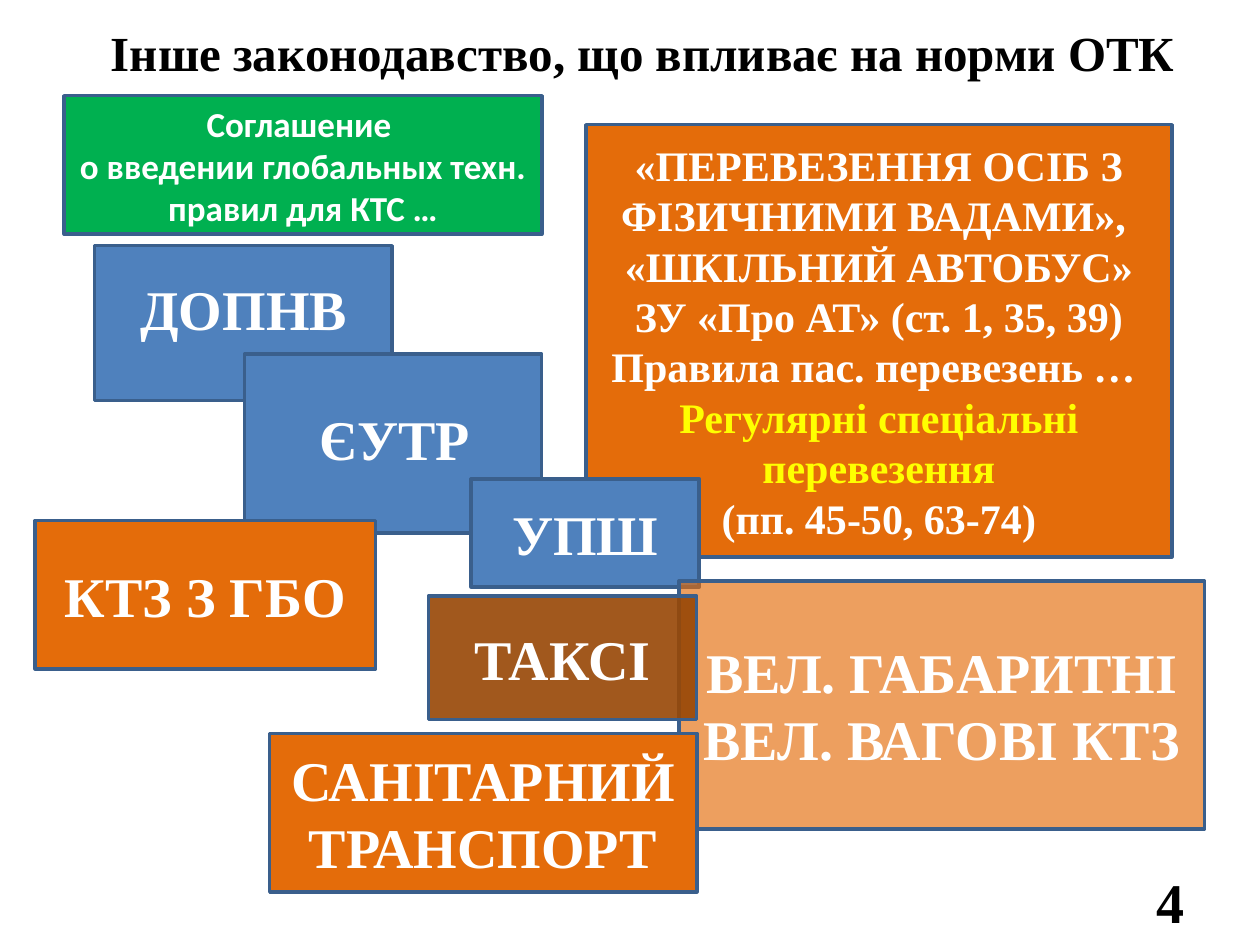
from lxml.etree import SubElement
from pptx import Presentation
from pptx.dml.color import RGBColor
from pptx.enum.shapes import MSO_SHAPE as Shape
from pptx.enum.text import MSO_ANCHOR as Anchor, MSO_AUTO_SIZE as AutoSize, PP_ALIGN as Align
from pptx.oxml.ns import qn
from pptx.util import Inches, Pt

COLORS = {
    "orange": "E46C0A", "brown": "984807", "blue": "4F81BD", "green": "00B050",
    "border": "3A5F8C", "white": "FFFFFF", "yellow": "FFFF00", "black": "000000",
}
SERIF, SANS = "Times New Roman", "Calibri"

# Grid: 100 columns by 75 rows
deck = Presentation()
deck.slide_width, deck.slide_height = Inches(10), Inches(7.5)
COLUMN, ROW = deck.slide_width / 100, deck.slide_height / 75


def place(box):
    """Turn a (column, row, columns, rows) box into slide lengths."""
    left, top, width, height = box
    return [round(n) for n in (left * COLUMN, top * ROW, width * COLUMN, height * ROW)]


def color(name):
    return RGBColor.from_string(COLORS[name])


def write(frame, lines, size=32, font=SERIF, ink="white", align=Align.CENTER,
          anchor=Anchor.MIDDLE):
    """Each line is a string or a (string, colour) pair; \\n breaks within a paragraph."""
    frame.word_wrap = True
    frame.vertical_anchor = anchor
    for i, line in enumerate(lines):
        words, shade = line if isinstance(line, tuple) else (line, ink)
        paragraph = frame.paragraphs[0] if i == 0 else frame.add_paragraph()
        paragraph.alignment = align
        for j, part in enumerate(words.split("\n")):
            if j:
                paragraph.add_line_break()
            run = paragraph.add_run()
            run.text = part
            run.font.size, run.font.name, run.font.bold = Pt(size), font, True
            run.font.color.rgb = color(shade)


def add_heading(slide, box, words):
    title = slide.shapes.title
    title.left, title.top, title.width, title.height = place(box)
    write(title.text_frame, [words], 28, ink="black", align=Align.LEFT, anchor=Anchor.TOP)
    title.text_frame.word_wrap = False
    title.text_frame.auto_size = AutoSize.NONE


def add_block(slide, box, fill, lines=(), opacity=100, **style):
    block = slide.shapes.add_shape(Shape.RECTANGLE, *place(box))
    block.shadow.inherit = False
    block.fill.solid()
    block.fill.fore_color.rgb = color(fill)
    block.line.color.rgb = color("border")
    block.line.width = Pt(2)
    if opacity < 100:
        tint = block.fill._xPr.find(qn("a:solidFill"))[0]
        SubElement(tint, qn("a:alpha"), val=str(opacity * 1000))
    write(block.text_frame, lines, **style)


def add_label(slide, box, words, **style):
    label = slide.shapes.add_textbox(*place(box))
    write(label.text_frame, [words], **style)


def add_passenger_rules(slide, box):
    add_block(slide, box, "orange", [
        "«ПЕРЕВЕЗЕННЯ ОСІБ З ФІЗИЧНИМИ ВАДАМИ», ",
        "«ШКІЛЬНИЙ АВТОБУС»",
        "ЗУ «Про АТ» (ст. 1, 35, 39)",
        "Правила пас. перевезень … ",
        ("Регулярні спеціальні перевезення", "yellow"),
        "(пп. 45-50, 63-74)",
    ], size=24)


def add_agreements(slide, box):
    """Overlapping steps from the global agreement down to УПШ."""
    left, top, _, _ = box
    add_block(slide, (left, top, 37.9, 11), "green",
              ["Соглашение \nо введении глобальных техн. правил для КТС …"],
              size=20, font=SANS)
    add_block(slide, (left + 2.4, top + 11.9, 23.6, 12.3), "blue")
    add_label(slide, (left + 3.8, top + 13.7, 20.9, 6.4), "ДОПНВ", anchor=Anchor.TOP)
    add_block(slide, (left + 14.3, top + 20.5, 23.6, 14.2), "blue")
    add_label(slide, (left + 17.6, top + 24, 17.3, 6.4), "ЄУТР", anchor=Anchor.TOP)
    add_block(slide, (left + 32.3, top + 30.4, 18.1, 8.6), "blue", ["УПШ"])


def add_vehicle_types(slide, box):
    left, top, _, _ = box
    add_block(slide, (left, top, 27, 11.8), "orange", ["КТЗ З ГБО"])
    add_block(slide, (left + 51.1, top + 4.8, 41.7, 19.7), "orange",
              ["ВЕЛ. ГАБАРИТНІ", "ВЕЛ. ВАГОВІ КТЗ"], opacity=65)
    add_block(slide, (left + 31.2, top + 6, 21.3, 9.8), "brown", ["ТАКСІ"], opacity=91)
    add_block(slide, (left + 18.6, top + 16.9, 33.9, 12.6), "orange",
              ["САНІТАРНИЙ ТРАНСПОРТ"])


def main():
    slide = deck.slides.add_slide(deck.slide_layouts[5])
    add_heading(slide, (7.8, 1.3, 87.3, 5.7), "Інше законодавство, що впливає на норми ОТК")
    add_passenger_rules(slide, (46.5, 9.9, 46.5, 34.3))
    add_agreements(slide, (5.1, 7.6, 50.4, 39))
    add_vehicle_types(slide, (2.8, 41.3, 92.8, 29.5))
    # Page number
    add_label(slide, (71.7, 69.5, 23.3, 4), "4", ink="black", align=Align.RIGHT)
    deck.save("out.pptx")


if __name__ == "__main__":
    main()
